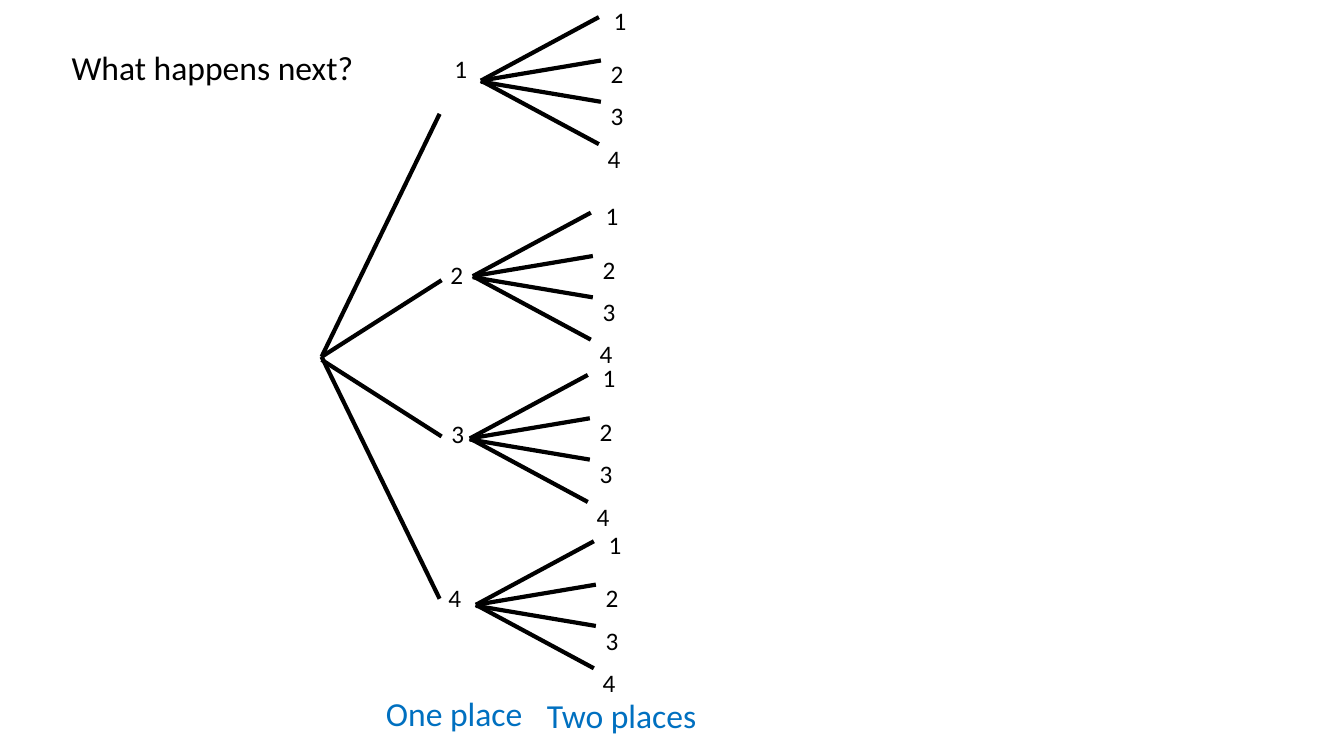
from dataclasses import dataclass

from lxml.etree import SubElement
from pptx import Presentation
from pptx.dml.color import RGBColor
from pptx.enum.shapes import MSO_CONNECTOR
from pptx.enum.text import MSO_ANCHOR, MSO_AUTO_SIZE, PP_ALIGN
from pptx.oxml.ns import qn
from pptx.util import Inches, Pt


@dataclass(frozen=True)
class Theme:
    font: str = "Calibri"
    ink: RGBColor = RGBColor(0x00, 0x00, 0x00)
    accent: RGBColor = RGBColor(0x00, 0x70, 0xC0)
    heading_size: Pt = Pt(24)
    label_size: Pt = Pt(18)
    line_width: Pt = Pt(3)


theme = Theme()


def write_text(box, text, size, color, align=PP_ALIGN.CENTER):
    frame = box.text_frame
    frame.word_wrap = True
    frame.auto_size = MSO_AUTO_SIZE.SHAPE_TO_FIT_TEXT
    frame.vertical_anchor = MSO_ANCHOR.TOP
    para = frame.paragraphs[0]
    para.text = text
    para.alignment = align
    para.font.name = theme.font
    para.font.size = size
    para.font.color.rgb = color


def add_fan(page, left, top, branches, labels, label_height):
    """Group four branches from one point with their numbers 1 to 4."""
    group = page.shapes.add_group_shape()
    for start_drop, across, down in branches:
        start_y = top + start_drop
        branch = group.shapes.add_connector(
            MSO_CONNECTOR.STRAIGHT, Inches(left), Inches(start_y),
            Inches(left + across), Inches(start_y + down))
        branch.line.color.rgb = theme.ink
        branch.line.width = theme.line_width
        SubElement(branch._element.spPr, qn("a:effectLst"))
    for number, (across, down) in enumerate(labels, start=1):
        box = group.shapes.add_textbox(
            Inches(left + across), Inches(top + down),
            Inches(0.42), Inches(label_height))
        write_text(box, str(number), theme.label_size, theme.ink)


deck = Presentation()
deck.slide_width = Inches(13.33)
deck.slide_height = Inches(7.5)
page = deck.slides.add_slide(deck.slide_layouts[5])

# Title
title = page.shapes.title
title.left, title.top = Inches(0.61), Inches(0.42)
title.width, title.height = Inches(5.16), Inches(0.5)
write_text(title, "What happens next?", theme.heading_size, theme.ink, PP_ALIGN.LEFT)

# Column captions
for caption, left, top, width in [("One place", 3.68, 6.83, 1.65),
                                  ("Two places", 5.12, 6.84, 2.09)]:
    box = page.shapes.add_textbox(Inches(left), Inches(top), Inches(width), Inches(0.5))
    write_text(box, caption, theme.heading_size, theme.accent)

# First choice: branches are (start drop, across, down), labels (across, down)
root_branches = [(0, 1.17, -2.41), (0, 1.19, -0.76), (0.03, 1.19, 0.76), (0, 1.17, 2.4)]
root_labels = [(1.17, -3.06), (1.13, -1.02), (1.14, 0.56), (1.11, 2.19)]
add_fan(page, 3.19, 3.54, root_branches, root_labels, 0.53)

# Second choice: the same fan beside each first number
twig_branches = [(0, 1.17, -0.63), (0, 1.19, -0.2), (0.01, 1.19, 0.2), (0, 1.17, 0.63)]
twig_labels = [(1.17, -0.8), (1.14, -0.27), (1.14, 0.15), (1.11, 0.57)]
for left, top in [(4.77, 0.8), (4.69, 2.74), (4.66, 4.35), (4.72, 6)]:
    add_fan(page, left, top, twig_branches, twig_labels, 0.14)

deck.save("out.pptx")
